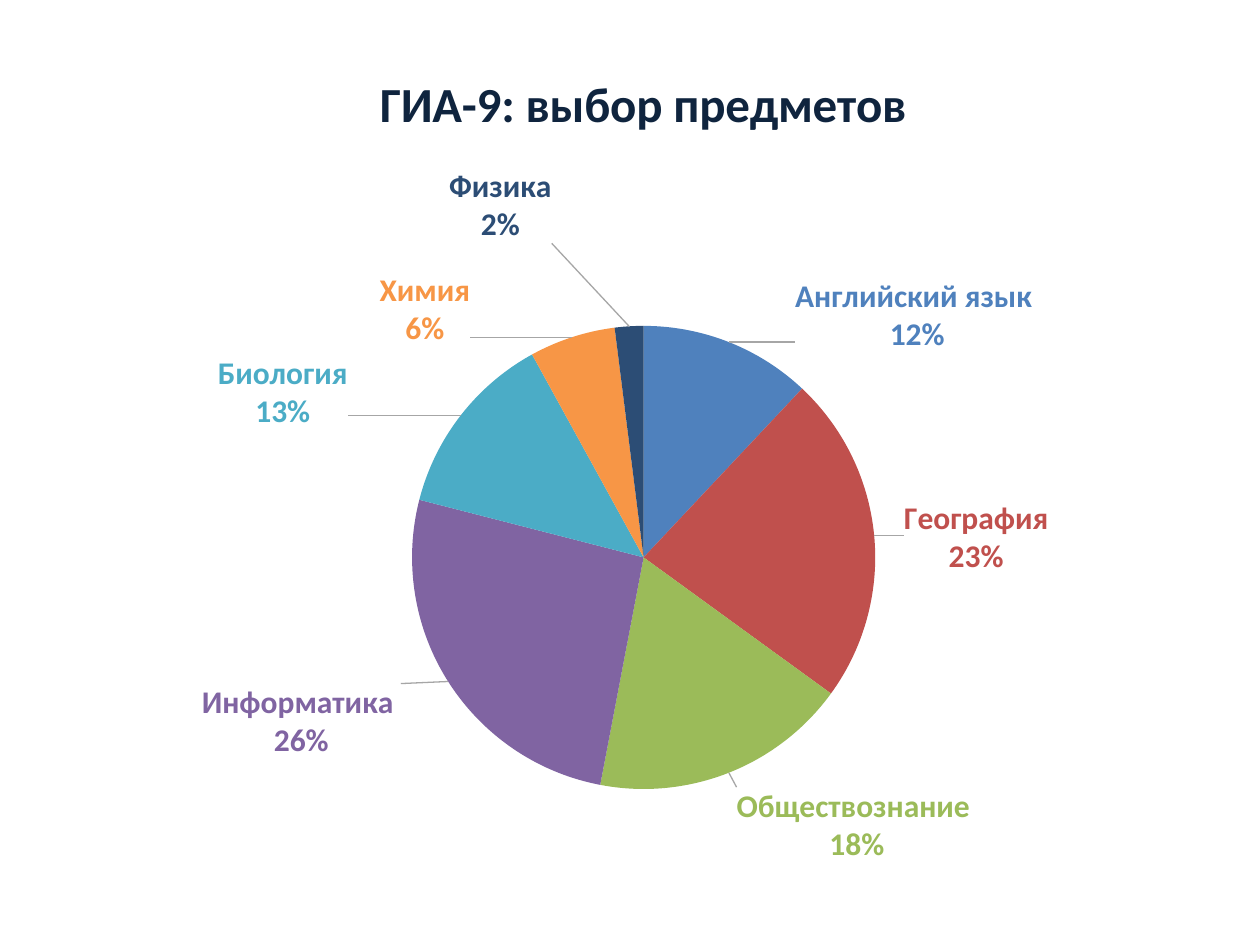
from lxml import etree
from pptx import Presentation
from pptx import util as u
from pptx.chart import data as d
from pptx.dml.color import RGBColor
from pptx.enum import chart as ch
from pptx.oxml import ns

HUES = {
    "title": "0F243E",
    "line": "A6A6A6",
    "Английский язык ": "4F81BD",
    "География": "C0504D",
    "Обществознание ": "9BBB59",
    "Информатика ": "8064A2",
    "Биология": "4BACC6",
    "Химия": "F79646",
    "Физика": "2C4D75",
}

SHARES = [
    ("Английский язык ", 12, 5.1, 1.9),
    ("География", 23, 1.8, 4.3),
    ("Обществознание ", 18, 0.4, 0.8),
    ("Информатика ", 26, -3.3, -0.2),
    ("Биология", 13, -8.6, 2.1),
    ("Химия", 6, -8, 1.8),
    ("Физика", 2, -10.3, -8),
]


def add(node, tag, val=None):
    kid = etree.SubElement(node, ns.qn("c:" + tag))
    if val is not None:
        kid.set("val", str(val))
    return kid


def layout(inner=False, **parts):
    root = etree.Element(ns.qn("c:layout"))
    man = add(root, "manualLayout")
    if inner:
        add(man, "layoutTarget", "inner")
    if "mode" in parts:
        mode = parts.pop("mode")
        add(man, "xMode", mode)
        add(man, "yMode", mode)
    for tag, pct in parts.items():
        add(man, tag, round(pct / 100, 4))
    return root


def place(node, lay, after=None):
    for old in node.findall(ns.qn("c:layout")):
        node.remove(old)
    if after is None:
        node.insert(0, lay)
    else:
        node.find(ns.qn("c:" + after)).addnext(lay)


class Deck:
    face = "Calibri"

    def __init__(self, wide, high):
        self.prs = Presentation()
        self.prs.slide_width, self.prs.slide_height = u.Cm(wide), u.Cm(high)
        self.slide = self.prs.slides.add_slide(self.prs.slide_layouts[6])

    def style(self, font, size, hue):
        font.name, font.size, font.bold = self.face, u.Pt(size), True
        font.color.rgb = RGBColor.from_string(HUES[hue])

    def head(self, chart, words):
        chart.has_title = True
        title = chart.chart_title
        run = title.text_frame.paragraphs[0].add_run()
        run.text = words
        self.style(run.font, 28, "title")
        place(title._element, layout(mode="edge", x=28.6, y=6.5), "tx")

    def show(self, node):
        flags = {"showVal": 0, "showCatName": 1, "showPercent": 1,
                 "showSerName": 0, "showLegendKey": 0}
        for tag, val in flags.items():
            node.find(ns.qn("c:" + tag)).set("val", str(val))
        sep = etree.Element(ns.qn("c:separator"))
        sep.text = "\n"
        last = node.find(ns.qn("c:showBubbleSize"))
        if last is None:
            last = node.find(ns.qn("c:showPercent"))
        last.addnext(sep)

    def label(self, point, name, x, y):
        tag = point.data_label
        self.style(tag.font, 18, name)
        tag.position = ch.XL_LABEL_POSITION.OUTSIDE_END
        node = tag._get_or_add_dLbl()
        self.show(node)
        place(node, layout(x=x, y=y), "idx")

    def leads(self, labels):
        node = labels._element
        for old in node.findall(ns.qn("c:showLeaderLines")):
            node.remove(old)
        add(node, "showLeaderLines", 1)
        box = add(add(node, "leaderLines"), "spPr")
        line = etree.SubElement(box, ns.qn("a:ln"), w="9525")
        fill = etree.SubElement(line, ns.qn("a:solidFill"))
        etree.SubElement(fill, ns.qn("a:srgbClr"), val=HUES["line"])

    def pie(self, words, rows, left, top, wide, high):
        data = d.CategoryChartData()
        data.categories = [row[0] for row in rows]
        data.add_series("Series 1", [row[1] for row in rows])
        frame = self.slide.shapes.add_chart(
            ch.XL_CHART_TYPE.PIE, u.Cm(left), u.Cm(top),
            u.Cm(wide), u.Cm(high), data)
        chart = frame.chart
        chart.has_legend = False
        chart.font.name, chart.font.size = self.face, u.Pt(10)
        self.head(chart, words)
        area = chart._chartSpace.chart.plotArea
        place(area, layout(True, mode="edge", x=31.9, y=27.1, w=37.2, h=63.8))
        plot = chart.plots[0]
        plot.vary_by_categories = True
        series = plot.series[0]
        labels = series.data_labels
        self.style(labels.font, 18, rows[0][0])
        labels.position = ch.XL_LABEL_POSITION.OUTSIDE_END
        self.show(labels._element)
        for i, (name, _, x, y) in enumerate(rows):
            point = series.points[i]
            point.format.fill.solid()
            point.format.fill.fore_color.rgb = RGBColor.from_string(HUES[name])
            self.label(point, name, x, y)
        self.leads(labels)


def main():
    deck = Deck(25.4, 19.05)
    deck.pie("ГИА-9: выбор предметов", SHARES, 0.3, 0, 25.1, 19.05)
    deck.prs.save("out.pptx")


if __name__ == "__main__":
    main()
